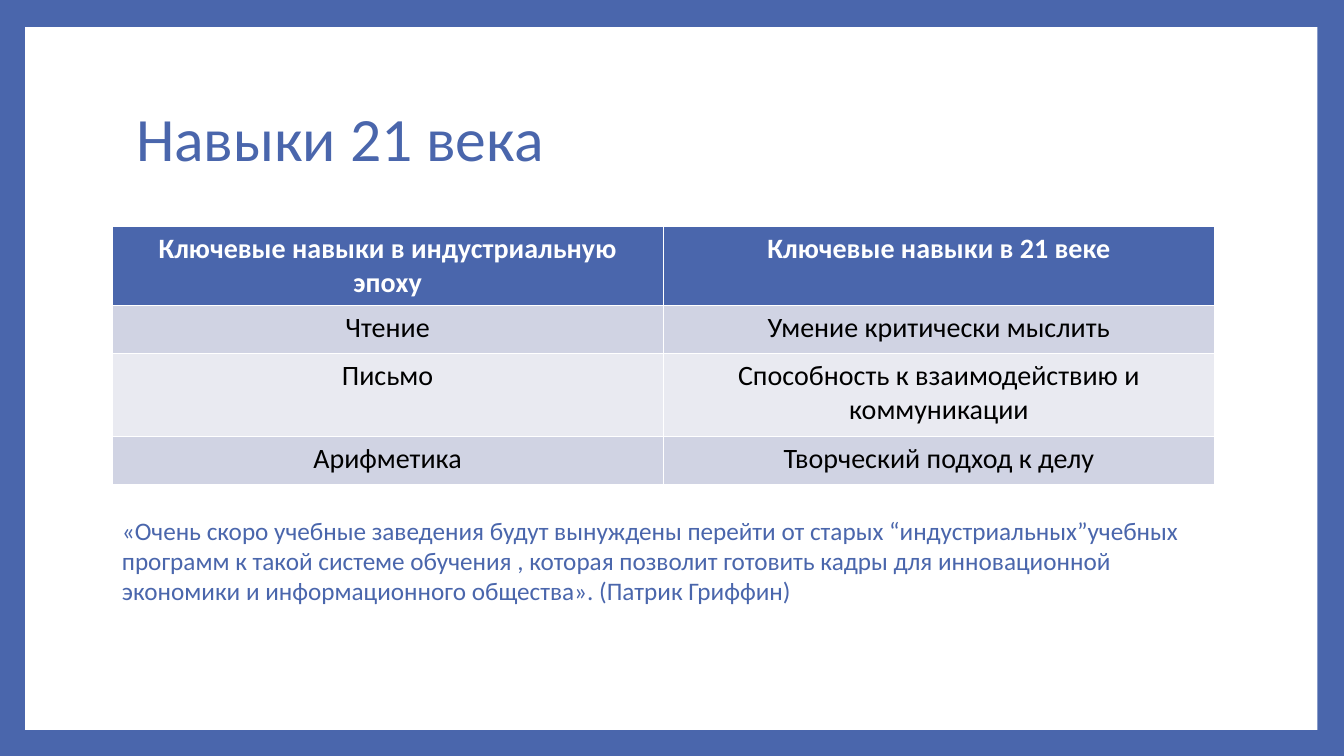
"""Build a slide comparing industrial-era skills with 21st-century skills."""
from pptx import Presentation
from pptx.dml.color import RGBColor
from pptx.enum.shapes import MSO_SHAPE
from pptx.enum.text import MSO_ANCHOR, MSO_AUTO_SIZE, PP_ALIGN
from pptx.util import Pt

BLUE = RGBColor(0x4A, 0x66, 0xAC)
WHITE = RGBColor(0xFF, 0xFF, 0xFF)
BLACK = RGBColor(0, 0, 0)
BAND_DARK = RGBColor(0xD0, 0xD3, 0xE3)
BAND_LIGHT = RGBColor(0xE9, 0xEA, 0xF1)

SKILLS = [
    ("Ключевые навыки в индустриальную эпоху", "Ключевые навыки в 21 веке"),
    ("Чтение", "Умение критически мыслить"),
    ("Письмо", "Способность к взаимодействию и коммуникации"),
    ("Арифметика", "Творческий подход к делу"),
]
ROW_HEIGHTS = [56, 34.56, 59, 34.56]
QUOTE = (
    "«Очень скоро учебные заведения будут вынуждены перейти от старых "
    "“индустриальных”учебных программ к такой системе обучения , которая "
    "позволит готовить кадры для инновационной экономики и информационного "
    "общества». (Патрик Гриффин)"
)
LEFT, WIDTH = Pt(80), Pt(787.6)


def add_text(paragraph, text, size, color, bold=False):
    run = paragraph.add_run()
    run.text = text
    run.font.name = "Calibri"
    run.font.size = Pt(size)
    run.font.bold = bold
    run.font.color.rgb = color


prs = Presentation()
prs.slide_width, prs.slide_height = Pt(960), Pt(540)
slide = prs.slides.add_slide(prs.slide_layouts[5])
slide.background.fill.solid()
slide.background.fill.fore_color.rgb = BLUE

panel = slide.shapes.add_shape(
    MSO_SHAPE.RECTANGLE, Pt(18), Pt(19.4), Pt(923), Pt(502)
)
panel.shadow.inherit = False
panel.fill.solid()
panel.fill.fore_color.rgb = WHITE
panel.line.fill.background()

title = slide.shapes.title
title.left, title.top, title.width, title.height = Pt(90), Pt(48), Pt(777.6), Pt(106.6)
title.text_frame.vertical_anchor = MSO_ANCHOR.MIDDLE
heading = title.text_frame.paragraphs[0]
heading.alignment = PP_ALIGN.LEFT
heading.line_spacing = 0.9
add_text(heading, "Навыки 21 века", 44, BLUE)
panel._element.addnext(title._element)

skills_table = slide.shapes.add_table(
    len(SKILLS), 2, LEFT, Pt(162), WIDTH, Pt(sum(ROW_HEIGHTS))
).table
for row, (skills, height) in enumerate(zip(SKILLS, ROW_HEIGHTS)):
    skills_table.rows[row].height = Pt(height)
    is_header = row == 0
    band = BLUE if is_header else BAND_DARK if row % 2 else BAND_LIGHT
    for column, skill in enumerate(skills):
        cell = skills_table.cell(row, column)
        cell.fill.solid()
        cell.fill.fore_color.rgb = band
        entry = cell.text_frame.paragraphs[0]
        entry.alignment = PP_ALIGN.CENTER
        add_text(entry, skill, 20, WHITE if is_header else BLACK, is_header)

quote = slide.shapes.add_textbox(LEFT, Pt(364.5), WIDTH, Pt(72.7)).text_frame
quote.word_wrap = True
quote.auto_size = MSO_AUTO_SIZE.SHAPE_TO_FIT_TEXT
add_text(quote.paragraphs[0], QUOTE, 18, BLUE)

prs.save("out.pptx")
